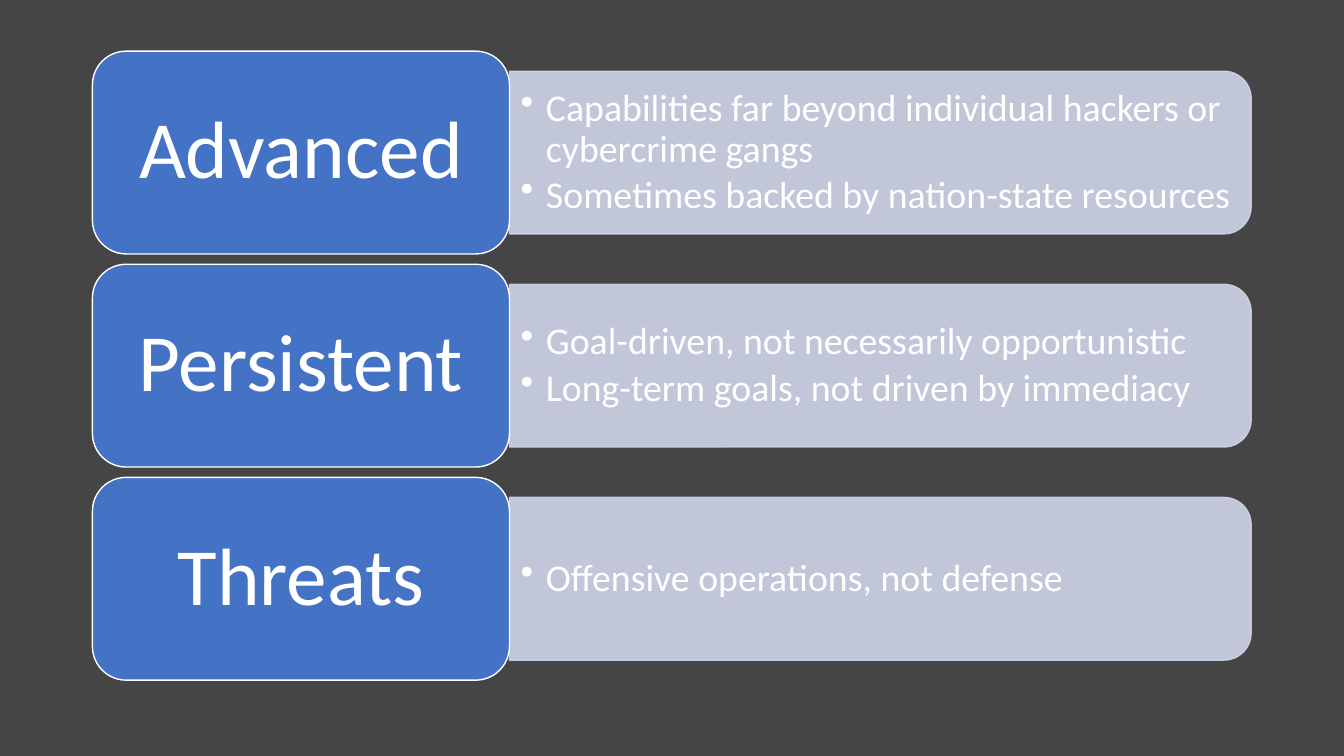
from lxml.etree import SubElement
from pptx import Presentation
from pptx.dml.color import RGBColor
from pptx.enum.shapes import MSO_SHAPE
from pptx.enum.text import MSO_ANCHOR, PP_ALIGN
from pptx.oxml.ns import qn
from pptx.util import Cm, Pt

COLORS = {"background": "454545", "label": "4472C4", "panel": "CFD5EA", "white": "FFFFFF"}

ROWS = [
    ("Advanced", ["Capabilities far beyond individual hackers or cybercrime gangs",
                  "Sometimes backed by nation-state resources"]),
    ("Persistent", ["Goal-driven, not necessarily opportunistic",
                    "Long-term goals, not driven by immediacy"]),
    ("Threats", ["Offensive operations, not defense"]),
]

# Layout in centimetres
LEFT, TOP, ROW_PITCH = 2.33, 1.29, 5.37
LABEL_WIDTH, LABEL_HEIGHT = 10.51, 5.11
PANEL_LEFT = LEFT + LABEL_WIDTH
PANEL_WIDTH, PANEL_HEIGHT = 18.69, 4.1
TEXT_WIDTH, TEXT_HEIGHT = 18.49, 3.7


def style_shape(shape, fill, line):
    shape.shadow.inherit = False
    shape.fill.solid()
    shape.fill.fore_color.rgb = RGBColor.from_string(COLORS[fill])
    shape.line.color.rgb = RGBColor.from_string(COLORS[line])
    shape.line.width = Pt(1)


def style_paragraph(paragraph, text, size):
    paragraph.text = text
    paragraph.line_spacing = 0.9
    paragraph.font.name = "Calibri"
    paragraph.font.size = Pt(size)
    paragraph.font.color.rgb = RGBColor.from_string(COLORS["white"])


presentation = Presentation()
presentation.slide_width = Cm(33.87)
presentation.slide_height = Cm(19.05)
slide = presentation.slides.add_slide(presentation.slide_layouts[6])
slide.background.fill.solid()
slide.background.fill.fore_color.rgb = RGBColor.from_string(COLORS["background"])

for row, (name, points) in enumerate(ROWS):
    top = TOP + row * ROW_PITCH
    middle = top + LABEL_HEIGHT / 2

    # Panel: turned a quarter so that its rounded corners face right
    panel = slide.shapes.add_shape(
        MSO_SHAPE.ROUND_2_SAME_RECTANGLE,
        Cm(PANEL_LEFT + (PANEL_WIDTH - PANEL_HEIGHT) / 2), Cm(middle - PANEL_WIDTH / 2),
        Cm(PANEL_HEIGHT), Cm(PANEL_WIDTH))
    panel.rotation = 90
    style_shape(panel, "panel", "panel")
    for color in panel._element.spPr.iter(qn("a:srgbClr")):
        SubElement(color, qn("a:alpha"), val="90000")

    # Bulleted points
    text_box = slide.shapes.add_textbox(
        Cm(PANEL_LEFT), Cm(middle - TEXT_HEIGHT / 2), Cm(TEXT_WIDTH), Cm(TEXT_HEIGHT))
    frame = text_box.text_frame
    frame.word_wrap = True
    frame.vertical_anchor = MSO_ANCHOR.MIDDLE
    frame.margin_left = frame.margin_right = Cm(0.28)
    frame.margin_top = frame.margin_bottom = Cm(0.15)
    for index, point in enumerate(points):
        paragraph = frame.add_paragraph() if index else frame.paragraphs[0]
        style_paragraph(paragraph, point, 27)
        paragraph.level = 1
        paragraph.space_before = Pt(4 if index else 0)
        properties = paragraph._p.get_or_add_pPr()
        properties.set("marL", str(Cm(0.64)))
        properties.set("indent", str(-Cm(0.64)))
        bullet = properties.makeelement(qn("a:buChar"), {"char": "•"})
        properties.find(qn("a:defRPr")).addprevious(bullet)

    # Label
    label = slide.shapes.add_shape(
        MSO_SHAPE.ROUNDED_RECTANGLE, Cm(LEFT), Cm(top), Cm(LABEL_WIDTH), Cm(LABEL_HEIGHT))
    style_shape(label, "label", "white")
    label.text_frame.word_wrap = True
    label.text_frame.vertical_anchor = MSO_ANCHOR.MIDDLE
    paragraph = label.text_frame.paragraphs[0]
    style_paragraph(paragraph, name, 58)
    paragraph.alignment = PP_ALIGN.CENTER

presentation.save("out.pptx")
